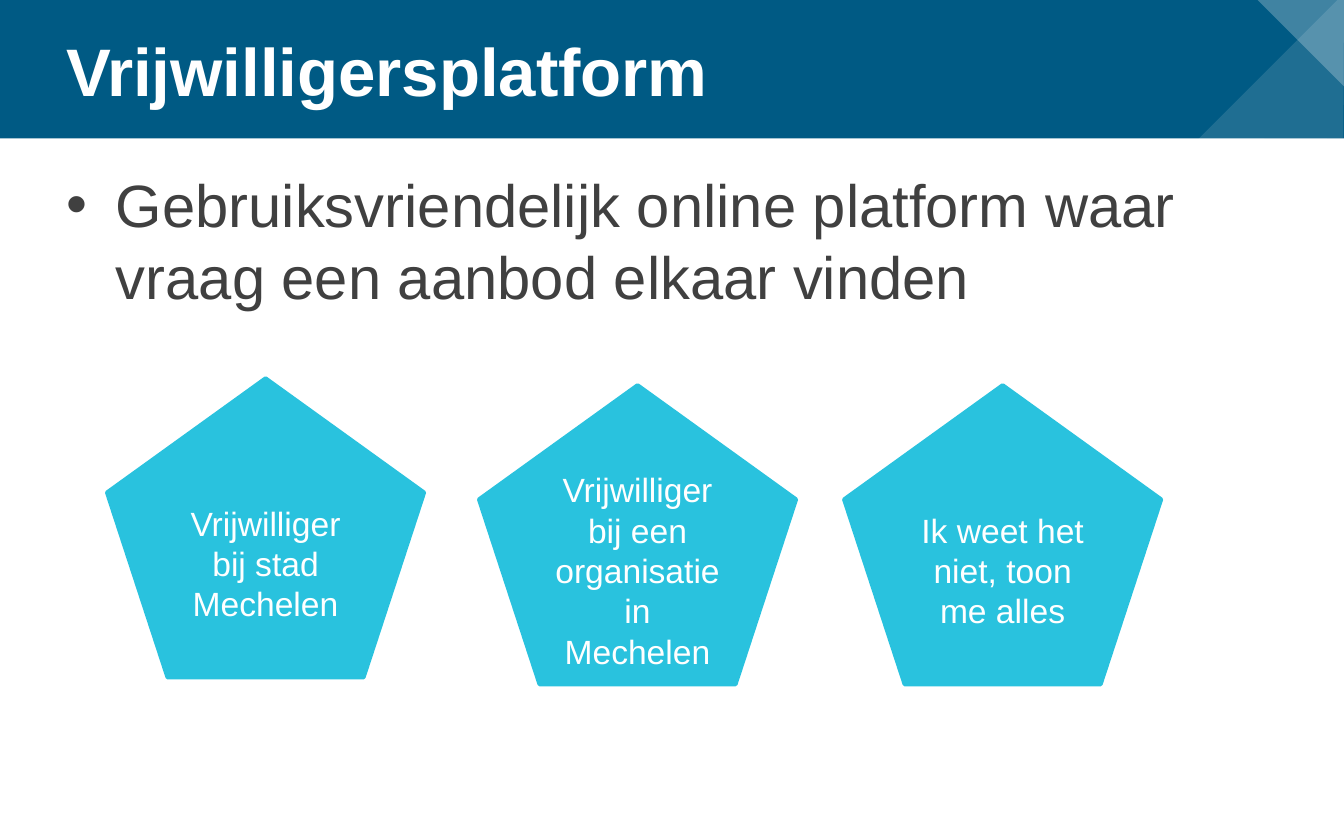
from dataclasses import dataclass
from typing import NamedTuple

from lxml.etree import SubElement as Sub
from pptx import Presentation
from pptx.dml.color import RGBColor as Rgb
from pptx.enum.shapes import MSO_SHAPE as Kind
from pptx.enum.text import MSO_ANCHOR as Anchor, PP_ALIGN as Align
from pptx.oxml.ns import qn
from pptx.util import Cm, Pt


@dataclass(frozen=True)
class Theme:
    font: str = "Arial"
    navy: str = "005A84"
    cyan: str = "29C2DE"
    white: str = "FFFFFF"
    gray: str = "404040"
    title: int = 36
    body: int = 32
    label: int = 18


class Box(NamedTuple):
    left: float
    top: float
    width: float
    height: float


class Corner(NamedTuple):
    box: Box
    turn: int
    alpha: int


class Choice(NamedTuple):
    left: float
    top: float
    text: str


THEME = Theme()
BAND = Box(0, 0, 25.4, 2.62)
TITLE = Box(1, 0, 22.86, 2.62)
BODY = Box(1, 3.05, 23.44, 12.17)
SIDE, TALL = 6, 5.66
INDENT = 0.94
CORNERS = (
    Corner(Box(22.76, 0.97, 3.89, 1.93), 135, 12),
    Corner(Box(23.83, -0.18, 2.34, 1.17), 45, 25),
)
CHOICES = (
    Choice(2.02, 7.15, "Vrijwilliger bij stad Mechelen"),
    Choice(9.05, 7.28, "Vrijwilliger bij een organisatie in Mechelen"),
    Choice(15.95, 7.28, "Ik weet het niet, toon me alles"),
)


def place(box: Box) -> list:
    return [Cm(side) for side in box]


def draw(slide, kind, box: Box, fill: str):
    shape = slide.shapes.add_shape(kind, *place(box))
    shape.shadow.inherit = False
    shape.fill.solid()
    shape.fill.fore_color.rgb = Rgb.from_string(fill)
    shape.line.fill.background()
    return shape


def write(shape, text: str, size: int, color: str, bold=False,
          anchor=Anchor.MIDDLE, align=Align.LEFT):
    frame = shape.text_frame
    frame.word_wrap = True
    frame.vertical_anchor = anchor
    para = frame.paragraphs[0]
    para.alignment = align
    run = para.add_run()
    run.text = text
    look = {"name": THEME.font, "size": Pt(size), "bold": bold}
    for key, value in look.items():
        setattr(run.font, key, value)
    run.font.color.rgb = Rgb.from_string(color)
    return para


def fade(shape, alpha: int) -> None:
    """Set the opacity of a solid fill, in percent."""
    color = shape.fill._xPr.find(qn("a:solidFill"))[0]
    Sub(color, qn("a:alpha"), val=str(alpha * 1000))


def bullet(para) -> None:
    para.space_before = Pt(13.7)
    props = para._p.get_or_add_pPr()
    props.set("marL", str(Cm(INDENT)))
    props.set("indent", str(-Cm(INDENT)))
    Sub(props, qn("a:buFont"), typeface=THEME.font)
    Sub(props, qn("a:buChar"), char="•")


def header(slide) -> None:
    draw(slide, Kind.RECTANGLE, BAND, THEME.navy)
    for corner in CORNERS:
        shape = draw(slide, Kind.ISOSCELES_TRIANGLE, corner.box, THEME.white)
        shape.rotation = corner.turn
        fade(shape, corner.alpha)
    title = slide.shapes.add_textbox(*place(TITLE))
    write(title, "Vrijwilligersplatform", THEME.title, THEME.white, bold=True)


def option(slide, choice: Choice) -> None:
    box = Box(choice.left, choice.top, SIDE, TALL)
    shape = draw(slide, Kind.REGULAR_PENTAGON, box, THEME.cyan)
    shape.line.color.rgb = Rgb.from_string(THEME.cyan)
    shape.line.width = Pt(2)
    write(shape, choice.text, THEME.label, THEME.white, align=Align.CENTER)


def main() -> None:
    deck = Presentation()
    deck.slide_width, deck.slide_height = Cm(25.4), Cm(15.88)
    slide = deck.slides.add_slide(deck.slide_layouts[6])
    header(slide)
    body = slide.shapes.add_textbox(*place(BODY))
    bullet(write(
        body,
        "Gebruiksvriendelijk online platform waar vraag een aanbod elkaar vinden",
        THEME.body, THEME.gray, anchor=Anchor.TOP))
    for choice in CHOICES:
        option(slide, choice)
    deck.save("out.pptx")


if __name__ == "__main__":
    main()
